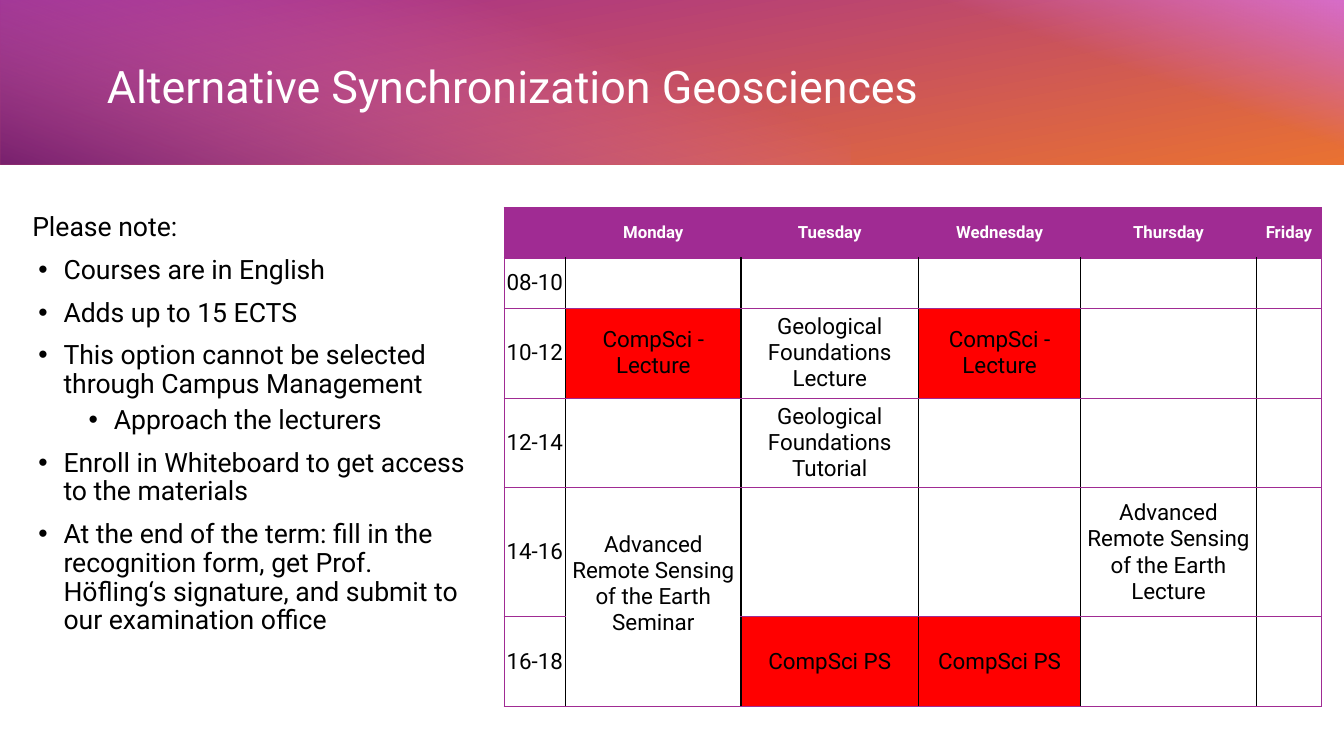
from lxml import etree
from pptx import Presentation
from pptx.dml.color import RGBColor
from pptx.enum.shapes import MSO_SHAPE
from pptx.enum.text import MSO_ANCHOR, MSO_AUTO_SIZE, PP_ALIGN
from pptx.oxml import parse_xml
from pptx.oxml.ns import nsdecls, qn
from pptx.util import Pt

PX = 9144  # 100 px to the inch
FONT = "Roboto"
RECTANGLE = MSO_SHAPE.RECTANGLE
MIDDLE, TOP = MSO_ANCHOR.MIDDLE, MSO_ANCHOR.TOP
LEFT, CENTER = PP_ALIGN.LEFT, PP_ALIGN.CENTER
NO_AUTOFIT = MSO_AUTO_SIZE.NONE

WHITE = RGBColor(0xFF, 0xFF, 0xFF)
BLACK = RGBColor(0x00, 0x00, 0x00)
RED = RGBColor(0xFF, 0x00, 0x00)
PURPLE = RGBColor(0xA0, 0x2B, 0x93)
ORANGE = RGBColor(0xE9, 0x71, 0x32)
PINK = RGBColor(0xD8, 0x6E, 0xCC)
PLUM = RGBColor(0x78, 0x20, 0x6E)

# Box, rotation, gradient angle, stops (percent, colour, opacity)
BANDS = [
    ((584, -587, 166, 1334), 270, 170, [(0, PURPLE, 100), (100, ORANGE, 100)]),
    ((975, -197, 165, 554), 270, 20, [(59, PINK, 0), (100, PINK, 100)]),
    ((339, -342, 166, 844), 90, 20, [(29, PINK, 0), (100, PLUM, 100)]),
]

# Text and level; None is a line without a bullet
NOTES = [
    ("Please note:", None),
    ("Courses are in English", 0),
    ("Adds up to 15 ECTS", 0),
    ("This option cannot be selected through Campus Management", 0),
    ("Approach the lecturers", 1),
    ("Enroll in Whiteboard to get access to the materials", 0),
    ("At the end of the term: fill in the recognition form, get Prof. "
     "Höfling‘s signature, and submit to our examination office", 0),
]

COLUMNS = [61, 174, 176, 161, 174, 65]
ROWS = [50, 50, 89, 89, 128, 89]
LECTURE = "CompSci - Lecture"
TUTORIAL = "CompSci PS"
SEMINAR = "Advanced Remote Sensing of the Earth Seminar"
TIMETABLE = [
    ["", "Monday", "Tuesday", "Wednesday", "Thursday", "Friday"],
    ["08-10", "", "", "", "", ""],
    ["10-12", LECTURE, "Geological Foundations Lecture", LECTURE, "", ""],
    ["12-14", "", "Geological Foundations Tutorial", "", "", ""],
    ["14-16", SEMINAR, "", "", "Advanced Remote Sensing of the Earth Lecture", ""],
    ["16-18", "", TUTORIAL, TUTORIAL, "", ""],
]


def place(shape, left, top, width, height):
    shape.left, shape.top = left * PX, top * PX
    shape.width, shape.height = width * PX, height * PX


def style_runs(para, size, color, bold=False):
    for span in para.runs:
        span.font.name = FONT
        span.font.size = Pt(size)
        span.font.bold = bold
        span.font.color.rgb = color


def add_band(group, box, rotation, angle, stops):
    band = group.shapes.add_shape(RECTANGLE, *(length * PX for length in box))
    band.rotation = rotation
    band.shadow.inherit = False
    band.line.fill.background()
    stop_xml = "".join(
        f'<a:gs pos="{position * 1000}"><a:srgbClr val="{color}">'
        f'<a:alpha val="{opacity * 1000}"/></a:srgbClr></a:gs>'
        for position, color, opacity in stops)
    gradient = parse_xml(
        f'<a:gradFill {nsdecls("a")} rotWithShape="1"><a:gsLst>{stop_xml}</a:gsLst>'
        f'<a:lin ang="{angle * 60000}" scaled="0"/></a:gradFill>')
    band.element.spPr.find(qn("a:prstGeom")).addnext(gradient)


def set_title(title, text):
    place(title, 96, 33, 1146, 110)
    frame = title.text_frame
    frame.text = text
    frame.vertical_anchor = MIDDLE
    frame.auto_size = NO_AUTOFIT
    para = frame.paragraphs[0]
    para.alignment = LEFT
    para.line_spacing = 0.9
    style_runs(para, 32, WHITE)


def set_bullet(para, level):
    properties = para._p.get_or_add_pPr()
    if level is None:
        margin, indent = 0, 0
        etree.SubElement(properties, qn("a:buNone"))
    else:
        margin, indent = 31 + 50 * level, -25
        para.level = level
        etree.SubElement(properties, qn("a:buFont"), typeface="Arial")
        etree.SubElement(properties, qn("a:buChar"), char="•")
    properties.set("marL", str(margin * PX))
    properties.set("indent", str(indent * PX))


def set_notes(body, notes):
    place(body, 22, 207, 462, 510)
    frame = body.text_frame
    frame.text = "\n".join(text for text, level in notes)
    frame.vertical_anchor = TOP
    frame.auto_size = NO_AUTOFIT
    for index, (para, (text, level)) in enumerate(zip(frame.paragraphs, notes)):
        set_bullet(para, level)
        para.line_spacing = 0.9
        para.space_before = Pt(0 if index == 0 else 5 if level == 1 else 10)
        style_runs(para, 19, BLACK)


def set_borders(cell, colors):
    """Draw the left, right, top and bottom edges; None leaves an edge out."""
    properties = cell._tc.get_or_add_tcPr()
    for index, (side, color) in enumerate(zip("LRTB", colors)):
        fill = (f'<a:solidFill><a:srgbClr val="{color}"/></a:solidFill>'
                if color is not None else "<a:noFill/>")
        properties.insert(index, parse_xml(
            f'<a:ln{side} {nsdecls("a")} w="{Pt(1)}">{fill}</a:ln{side}>'))


def format_cell(cell, text, row, column):
    header, last = row == 0, column == len(COLUMNS) - 1
    inner = None if header else BLACK
    cell.margin_left = cell.margin_right = cell.margin_top = 0
    cell.margin_bottom = 26 * PX if text == SEMINAR else 0
    cell.vertical_anchor = MIDDLE
    color = PURPLE if header else RED if text in (LECTURE, TUTORIAL) else None
    if color is None:
        cell.fill.background()
    else:
        cell.fill.solid()
        cell.fill.fore_color.rgb = color
    set_borders(cell, (PURPLE if column == 0 else inner,
                       PURPLE if last else inner, PURPLE, PURPLE))
    if text:
        cell.text_frame.text = text
        para = cell.text_frame.paragraphs[0]
        para.alignment = CENTER
        style_runs(para, 12 if header else 16, WHITE if header else BLACK, header)


def add_timetable(page):
    table = page.shapes.add_table(
        len(ROWS), len(COLUMNS), 500 * PX, 206 * PX,
        sum(COLUMNS) * PX, sum(ROWS) * PX).table
    table.horz_banding = False
    table.first_row = False
    for column, width in zip(table.columns, COLUMNS):
        column.width = width * PX
    for row, height in zip(table.rows, ROWS):
        row.height = height * PX
    for row, texts in enumerate(TIMETABLE):
        for column, text in enumerate(texts):
            format_cell(table.cell(row, column), text, row, column)
    # The Monday seminar runs over the last two slots
    table.cell(4, 1).merge(table.cell(5, 1))


def main():
    deck = Presentation()
    deck.slide_width, deck.slide_height = 1333 * PX, 750 * PX
    page = deck.slides.add_slide(deck.slide_layouts[1])
    title, body = page.placeholders

    # Header gradient, behind the title
    header = page.shapes.add_group_shape()
    for band in BANDS:
        add_band(header, *band)
    title.element.addprevious(header.element)

    # Content
    set_title(title, "Alternative Synchronization Geosciences")
    set_notes(body, NOTES)
    add_timetable(page)
    deck.save("out.pptx")


if __name__ == "__main__":
    main()
